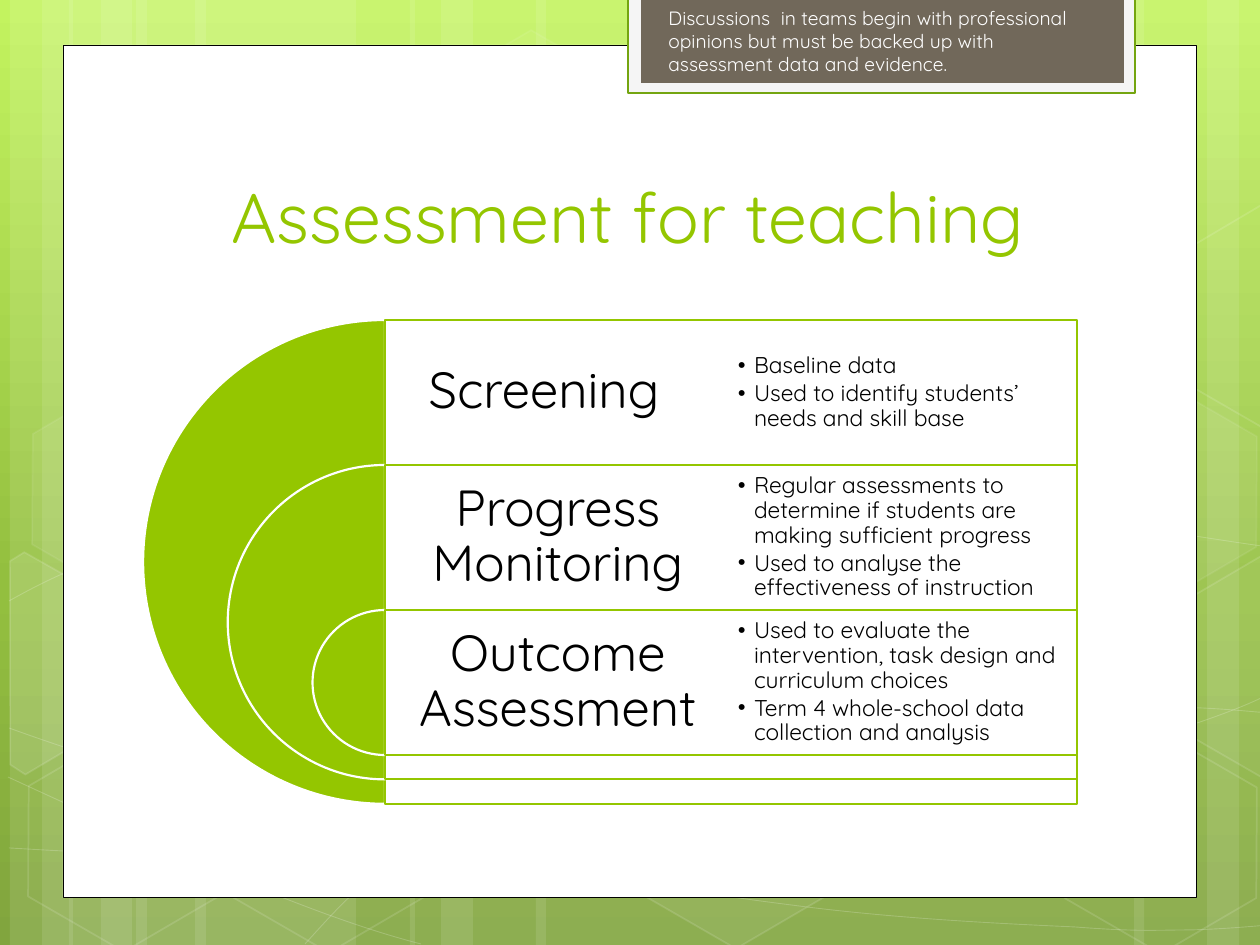
from math import cos, radians, sin

from lxml.etree import SubElement
from pptx import Presentation
from pptx.dml.color import RGBColor
from pptx.enum.shapes import MSO_SHAPE
from pptx.enum.text import MSO_ANCHOR, MSO_AUTO_SIZE, PP_ALIGN
from pptx.oxml.ns import qn
from pptx.util import Pt

SCALE = 914400 / 126
WIDTH, HEIGHT = 1260, 945
FONT = "Quicksand"
TILT = 30
COLORS = {
    "white": "FFFFFF", "black": "000000", "green": "94C600",
    "dark green": "74A510", "pale": "F5F5F5", "brown": "71685A",
}
BACKGROUND_STOPS = [(0, "C3F35F"), (62, "93BF3F"), (100, "81A53E")]

TITLE = "Assessment for teaching"
CALLOUT = ("Discussions  in teams begin with professional opinions but must be "
           "backed up with assessment data and evidence.")
STAGES = [
    ("Screening  ", ["Baseline data",
                     "Used to identify students’ needs and skill base"]),
    ("Progress Monitoring", [
        "Regular assessments to determine if students are making sufficient progress",
        "Used to analyse the effectiveness of instruction"]),
    ("Outcome Assessment", [
        "Used to evaluate the intervention, task design and curriculum choices",
        "Term 4 whole-school data collection and analysis"]),
]

# Backdrop: (left, width, rotation) of the full-height strips
STRIPS = [(136, 220, 0), (10, 63, 0), (42, 105, 0), (195, 220, 0), (69, 63, 0),
          (101, 105, 0), (924, 220, 180), (1207, 63, 180), (1134, 105, 180),
          (536, 388, 0), (410, 63, 0), (441, 105, 0)]
# Start point, then three Bézier points for each segment
CURVES = [
    [(9, 848), (77, 852), (145, 856), (239, 854), (334, 853), (451, 851), (577, 838),
     (703, 825), (882, 801), (998, 777), (1113, 753), (1231, 715), (1269, 694)],
    [(9, 601), (45, 581), (82, 562), (152, 543), (224, 524), (326, 496), (437, 488),
     (549, 479), (685, 478), (824, 488), (963, 497), (1193, 537), (1269, 547)],
    [(8, 777), (160, 847), (311, 916), (421, 944)],
    [(9, 728), (48, 742), (88, 756), (161, 776), (234, 795), (344, 827), (450, 848),
     (554, 869), (687, 892), (791, 905), (896, 919), (1008, 924), (1075, 927),
     (1140, 932), (1158, 930), (1191, 930), (1223, 929), (1246, 927), (1269, 925)],
    [(305, 944), (328, 919), (350, 893), (381, 871), (411, 848), (454, 823), (489, 805),
     (524, 788), (546, 780), (592, 767), (638, 755), (722, 737), (766, 728),
     (811, 719), (818, 720), (857, 717), (896, 713), (958, 709), (1000, 708),
     (1045, 707), (1116, 708), (1116, 708), (1144, 708), (1173, 708), (1201, 708),
     (1223, 709), (1245, 711), (1256, 712), (1268, 713), (1264, 712), (1268, 713)],
]
# (left, top, fill opacity, line opacity)
HEXAGONS = [
    (421, 45, 4, 8), (626, 742, 6, 12), (14, 745, None, 12), (18, 393, 7, 8),
    (219, 746, None, 12), (949, 571, 10, 12), (1051, 747, None, 12), (1051, 396, 7, 8),
]
# (centre, points, fill opacity)
CUT_HEXAGONS = [
    ((45, 674), [(10, 561), (24, 552), (121, 607), (120, 718), (25, 774), (10, 765)], 10),
    ((1241, 655), [(1167, 611), (1261, 556), (1271, 562), (1271, 772), (1263, 777),
                   (1167, 722)], 4),
    ((1241, 304), [(1167, 261), (1261, 205), (1273, 212), (1271, 422), (1263, 427),
                   (1167, 372)], None),
]


def px(value):
    return round(value * SCALE)


def style(shape, fill=None, fill_opacity=100, line=None, line_width=1, line_opacity=100):
    shape.shadow.inherit = False
    for target, color, opacity in ((shape.fill, fill, fill_opacity),
                                   (shape.line.fill, line, line_opacity)):
        if color is None:
            target.background()
            continue
        target.solid()
        target.fore_color.rgb = RGBColor.from_string(COLORS[color])
        if opacity < 100:
            choice = target.fore_color._xFill.find(qn("a:srgbClr"))
            SubElement(choice, qn("a:alpha")).set("val", str(opacity * 1000))
    if line:
        shape.line.width = Pt(line_width)
    return shape


def add_preset(slide, kind, box, **look):
    return style(slide.shapes.add_shape(kind, *map(px, box)), **look)


def add_outline(slide, points, closed, **look):
    builder = slide.shapes.build_freeform(*points[0], scale=SCALE)
    builder.add_line_segments(points[1:], close=closed)
    return style(builder.convert_to_shape(), **look)


def add_curve(slide, points, **look):
    """Draw an outline whose points, taken in threes, are Bézier segments."""
    shape = add_outline(slide, points, False, **look)
    outline = shape.element.find(".//" + qn("a:path"))
    lines = outline.findall(qn("a:lnTo"))
    for start in range(0, len(lines), 3):
        segment = SubElement(outline, qn("a:cubicBezTo"))
        for line in lines[start:start + 3]:
            segment.append(line[0])
            outline.remove(line)


def untilt(point, centre):
    """Turn a point back by TILT, so that the shape's own rotation restores it."""
    across, down = point[0] - centre[0], point[1] - centre[1]
    cosine, sine = cos(radians(TILT)), sin(radians(TILT))
    return (round(centre[0] + across * cosine + down * sine),
            round(centre[1] - across * sine + down * cosine))


def write(paragraph, text, size, color):
    run = paragraph.add_run()
    run.text = text
    run.font.size = Pt(size)
    run.font.name = FONT
    run.font.color.rgb = RGBColor.from_string(COLORS[color])


def add_text_box(slide, box, inset=None):
    frame = slide.shapes.add_textbox(*map(px, box)).text_frame
    frame.word_wrap = True
    if inset is not None:
        frame.vertical_anchor = MSO_ANCHOR.MIDDLE
        frame.margin_left = frame.margin_right = px(inset)
        frame.margin_top = frame.margin_bottom = px(inset)
    return frame


def set_bullet(paragraph, indent):
    properties = paragraph._p.get_or_add_pPr()
    properties.set("marL", str(px(indent)))
    properties.set("indent", str(-px(indent)))
    SubElement(properties, qn("a:buFont")).set("typeface", FONT)
    SubElement(properties, qn("a:buChar")).set("char", "•")


def draw_backdrop(slide):
    fill = slide.background.fill
    fill.gradient()
    fill.gradient_angle = 270
    stops = slide.element.find(".//" + qn("a:gsLst"))
    for stop in list(stops):
        stops.remove(stop)
    for position, color in BACKGROUND_STOPS:
        stop = SubElement(stops, qn("a:gs"))
        stop.set("pos", str(position * 1000))
        SubElement(stop, qn("a:srgbClr")).set("val", color)

    for left, width, rotation in STRIPS:
        strip = add_preset(slide, MSO_SHAPE.RECTANGLE, (left, 0, width, HEIGHT),
                           fill="white", fill_opacity=10)
        strip.rotation = rotation
    for curve in CURVES:
        add_curve(slide, curve, line="white", line_width=0.5, line_opacity=20)
    for left, top, opacity, line_opacity in HEXAGONS:
        hexagon = add_preset(slide, MSO_SHAPE.HEXAGON, (left, top, 220, 192),
                             fill="white" if opacity else None, fill_opacity=opacity,
                             line="white", line_opacity=line_opacity)
        hexagon.adjustments[0] = 0.285
        hexagon.rotation = TILT
    for centre, points, opacity in CUT_HEXAGONS:
        flat = [untilt(point, centre) for point in points]
        hexagon = add_outline(slide, flat, True, fill="white" if opacity else None,
                              fill_opacity=opacity, line="white", line_opacity=12)
        hexagon.rotation = TILT

    add_preset(slide, MSO_SHAPE.RECTANGLE, (63, 45, 1134, 853),
               fill="white", line="black", line_width=0.5)
    add_preset(slide, MSO_SHAPE.RECTANGLE, (628, -3, 507, 96),
               fill="pale", line="dark green", line_width=1.25)
    add_preset(slide, MSO_SHAPE.RECTANGLE, (641, -3, 483, 86), fill="brown")


def draw_title(slide):
    title = slide.shapes.title
    slide.shapes.element.append(title.element)  # bring in front of the backdrop
    title.left, title.top, title.width, title.height = map(px, (144, 142, 968, 122))
    title.text_frame.vertical_anchor = MSO_ANCHOR.BOTTOM
    paragraph = title.text_frame.paragraphs[0]
    paragraph.alignment = PP_ALIGN.CENTER
    write(paragraph, TITLE, 40, "green")


def draw_stages(slide, left=385, top=320, width=692, row=145, step=24.4):
    count, column = len(STAGES), width // 2
    for index, (name, points) in enumerate(STAGES):
        y = top + index * row
        height = (count - index) * row + (count - 1 - index) * step
        pie = add_preset(slide, MSO_SHAPE.PIE, (left - height / 2, y, height, height),
                         fill="green", line="white", line_width=1.25)
        pie.adjustments[0], pie.adjustments[1] = 54, 162
        add_preset(slide, MSO_SHAPE.RECTANGLE, (left, y, width, height),
                   fill="white", fill_opacity=90, line="green", line_width=1.25)

        label = add_text_box(slide, (left, y, column, row), 15).paragraphs[0]
        label.alignment = PP_ALIGN.CENTER
        label.line_spacing = 0.9
        write(label, name, 29, "black")

        frame = add_text_box(slide, (left + column + 1, y, column, row), 6)
        for number, point in enumerate(points):
            paragraph = frame.add_paragraph() if number else frame.paragraphs[0]
            paragraph.level = 1
            paragraph.line_spacing = 0.9
            paragraph.space_after = Pt(2)
            set_bullet(paragraph, 16)
            write(paragraph, point, 13, "black")


def main():
    presentation = Presentation()
    presentation.slide_width, presentation.slide_height = px(WIDTH), px(HEIGHT)
    slide = presentation.slides.add_slide(presentation.slide_layouts[5])
    draw_backdrop(slide)
    draw_title(slide)
    draw_stages(slide)
    callout = add_text_box(slide, (656, 0, 436, 83))
    callout.auto_size = MSO_AUTO_SIZE.SHAPE_TO_FIT_TEXT
    write(callout.paragraphs[0], CALLOUT, 11, "white")
    presentation.save("out.pptx")


if __name__ == "__main__":
    main()
